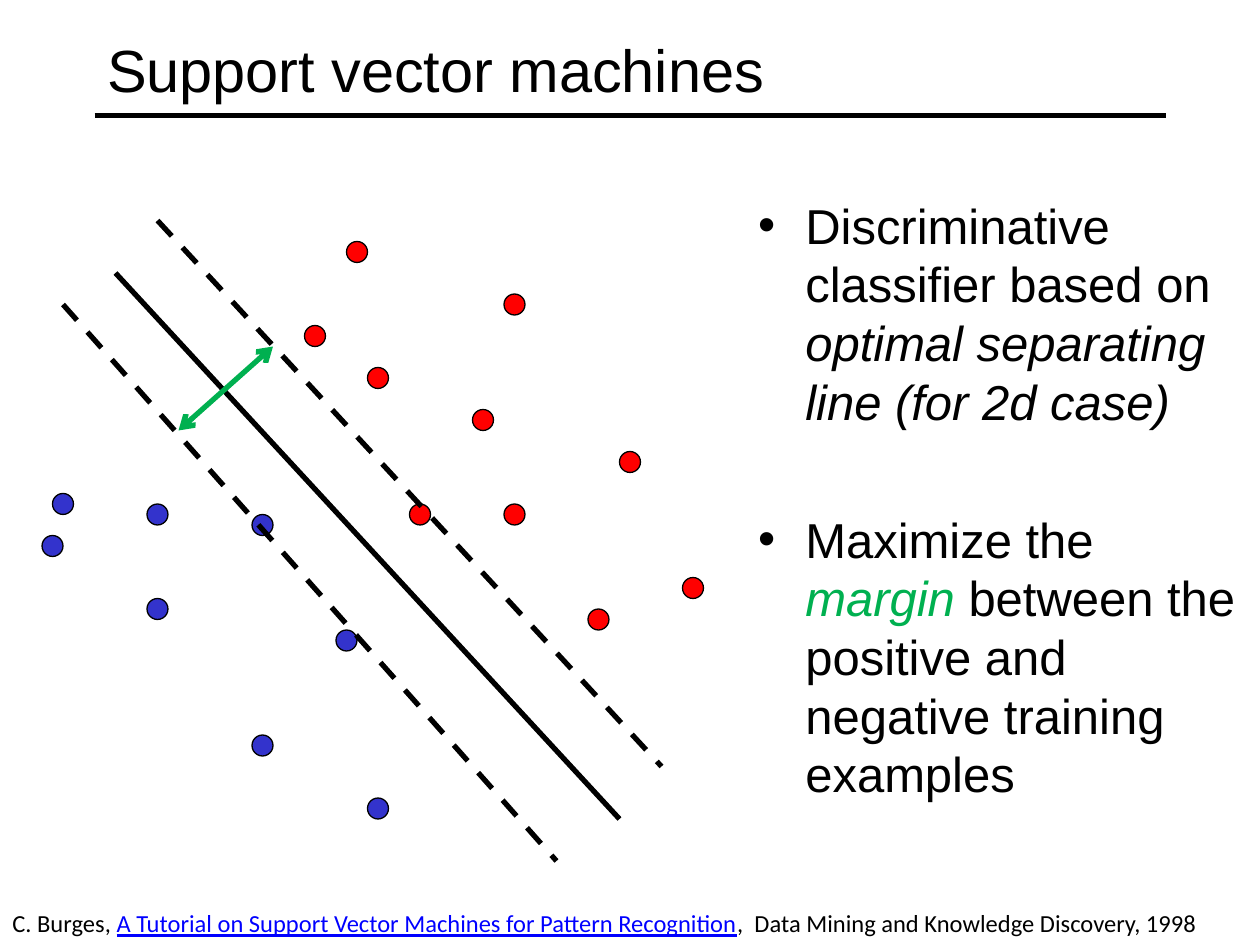
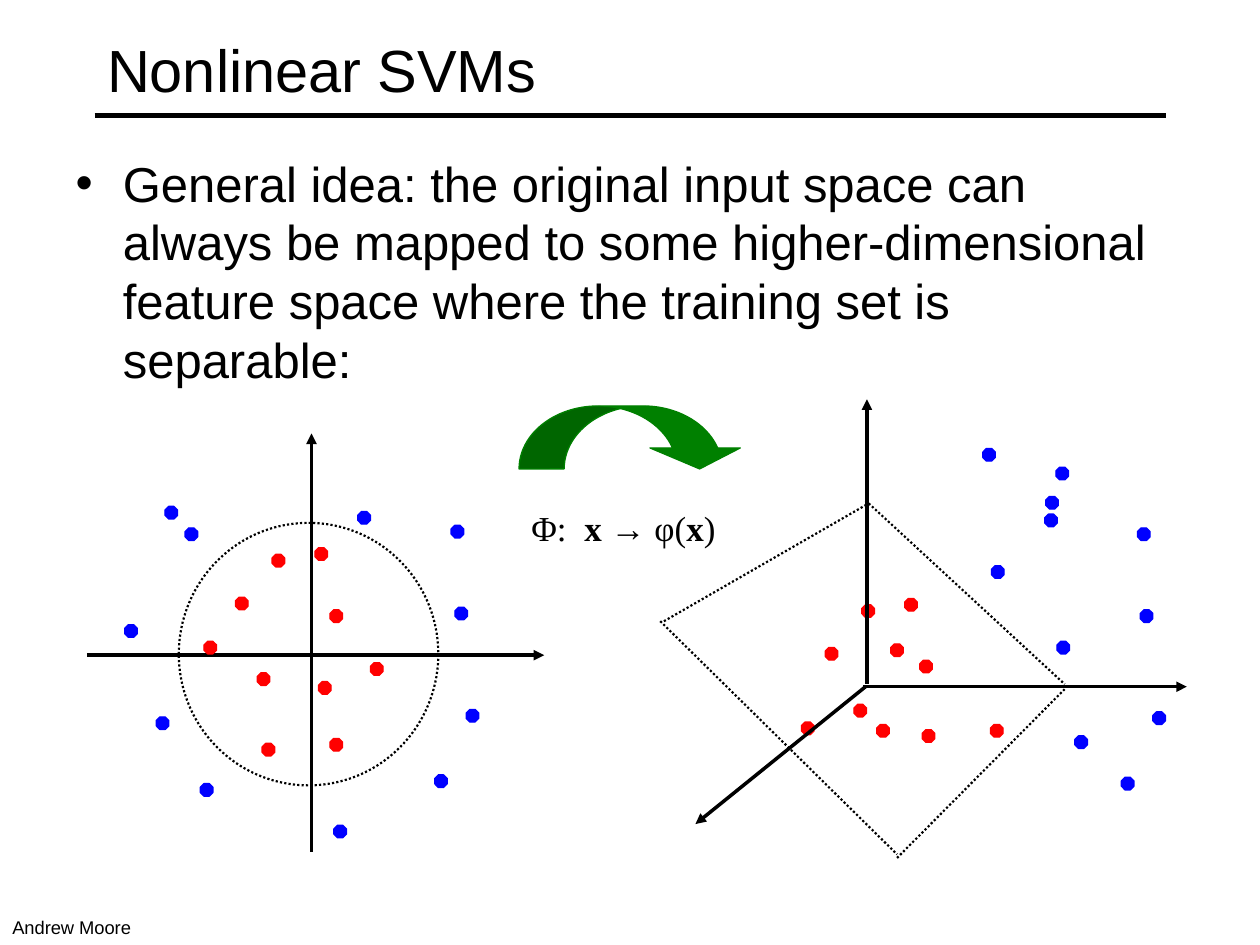
from dataclasses import dataclass
from typing import Optional

from lxml.etree import SubElement
from pptx import Presentation
from pptx.dml.color import RGBColor
from pptx.enum.dml import MSO_LINE_DASH_STYLE as Dash
from pptx.enum.shapes import MSO_CONNECTOR, MSO_SHAPE
from pptx.enum.text import MSO_ANCHOR, MSO_AUTO_SIZE, PP_ALIGN
from pptx.oxml.ns import qn
from pptx.util import Pt

# Shared look
BLACK = RGBColor(0x00, 0x00, 0x00)
RED = RGBColor(0xFF, 0x00, 0x00)
BLUE = RGBColor(0x00, 0x00, 0xFF)
INDIGO = RGBColor(0x33, 0x33, 0xCC)
MARGIN_GREEN = RGBColor(0x00, 0xB0, 0x50)
ARROW_GREEN = RGBColor(0x00, 0x80, 0x00)
SANS, FOOTER_SANS, SERIF = "Arial", "Calibri", "Times New Roman"
TITLE_SIZE, BODY_SIZE = 34, 28
BODY_PITCH = 33.5


@dataclass(frozen=True)
class Span:
    text: str
    color: RGBColor = BLACK
    bold: bool = False
    italic: bool = False
    underline: bool = False


@dataclass(frozen=True)
class Box:
    left: float
    top: float
    width: float
    height: float

    def lengths(self) -> tuple:
        return Pt(self.left), Pt(self.top), Pt(self.width), Pt(self.height)


@dataclass(frozen=True)
class Stroke:
    width: float
    color: RGBColor = BLACK
    dash: Optional[Dash] = None
    head: Optional[str] = None
    tail: Optional[str] = None


@dataclass(frozen=True)
class Segment:
    x1: float
    y1: float
    x2: float
    y2: float
    stroke: Stroke


@dataclass(frozen=True)
class Cluster:
    """Points of one class, given by their top left corners."""
    preset: MSO_SHAPE
    size: float
    fill: RGBColor
    outline: RGBColor
    corners: tuple


RULE = Segment(54, 66, 666, 66, Stroke(3))
AXIS = Stroke(2, tail="triangle")
DOTTED = Stroke(1.25, dash=Dash.ROUND_DOT)
SOLID, DASHED = Stroke(3), Stroke(3, dash=Dash.DASH)

# Slide 1: separable points and their margin
NEGATIVES = Cluster(MSO_SHAPE.OVAL, 12, INDIGO, BLACK, (
    (30, 282), (84, 288), (84, 342), (24, 306),
    (144, 294), (192, 360), (144, 420), (210, 456)))
POSITIVES = Cluster(MSO_SHAPE.OVAL, 12, RED, BLACK, (
    (210, 210), (270, 234), (288, 288), (234, 288), (174, 186),
    (336, 348), (354, 258), (288, 168), (390, 330), (198, 138)))
MARGIN_LINES = (
    Segment(36, 174, 318, 492, DASHED),
    Segment(90, 126, 378, 438, DASHED),
    Segment(66, 156, 354, 468, SOLID),
    Segment(102, 246, 156, 198,
            Stroke(3, MARGIN_GREEN, head="arrow", tail="arrow")),
)


# Slide 2: input space on the left, feature space on the right
def octagons(color: RGBColor, *corners: tuple) -> Cluster:
    return Cluster(MSO_SHAPE.OCTAGON, 7.2, color, color, corners)


INPUT_POINTS = (
    octagons(RED, (180, 313), (134.6, 341.3), (147, 384.5), (188.6, 422),
             (155.5, 316.8), (116.6, 366.5), (149.8, 424.8), (188.6, 348.5),
             (211.7, 378.7), (182, 389.5)),
    octagons(BLUE, (260, 347), (248.4, 442.8), (71.3, 357), (190.8, 471.6),
             (266.4, 405.4), (114.5, 447.8), (89.3, 409.7), (94.3, 289.4),
             (204.5, 292.3), (105.8, 301.7), (257.8, 300.2)),
)
FEATURE_POINTS = (
    octagons(RED, (517, 342), (471.6, 370), (501, 414), (566, 414),
             (492.5, 345.6), (509, 368), (527, 417), (525.6, 377.3),
             (488, 402.5), (458, 412.6)),
    octagons(BLUE, (651.6, 348.5), (640.8, 444.2), (603.4, 267),
             (604, 366.5), (658.8, 406.8), (566.6, 323.3), (614.2, 420.5),
             (597.6, 283.7), (597, 293.8), (561.6, 256.3), (650, 301.7)),
)
INPUT_AXES = (
    Segment(178, 486.7, 178, 247.7, AXIS),
    Segment(49.7, 374.4, 311, 374.4, AXIS),
)
FEATURE_LINES = (
    Segment(495.4, 391, 495.4, 228.2, AXIS),
    Segment(493.2, 392.4, 678.2, 392.4, AXIS),
    Segment(494.6, 392.4, 397.4, 470.9, AXIS),
    # Edges of the separating plane
    Segment(494.6, 286, 608.4, 391, DOTTED),
    Segment(512.6, 490.3, 608.4, 393.8, DOTTED),
    Segment(379.4, 355, 494.6, 288.7, DOTTED),
    Segment(377.3, 355, 512.6, 488.2, DOTTED),
)


def write(paragraph, spans: tuple, font_name: str, size: float) -> None:
    for span in spans:
        run = paragraph.add_run()
        run.text = span.text
        font = run.font
        font.name, font.size = font_name, Pt(size)
        font.bold, font.italic = span.bold, span.italic
        font.underline = span.underline
        font.color.rgb = span.color


def place(placeholder, box: Box) -> None:
    (placeholder.left, placeholder.top,
     placeholder.width, placeholder.height) = box.lengths()
    placeholder.text_frame.auto_size = MSO_AUTO_SIZE.NONE


def draw_segment(slide, segment: Segment) -> None:
    stroke = segment.stroke
    connector = slide.shapes.add_connector(
        MSO_CONNECTOR.STRAIGHT, Pt(segment.x1), Pt(segment.y1),
        Pt(segment.x2), Pt(segment.y2))
    connector.line.color.rgb = stroke.color
    connector.line.width = Pt(stroke.width)
    if stroke.dash:
        connector.line.dash_style = stroke.dash
    properties = connector.element.spPr
    outline = properties.find(qn("a:ln"))
    for tag, kind in (("a:headEnd", stroke.head), ("a:tailEnd", stroke.tail)):
        if kind:
            SubElement(outline, qn(tag), type=kind)
    SubElement(properties, qn("a:effectLst"))


def draw_shape(slide, preset: MSO_SHAPE, box: Box, fill: Optional[RGBColor],
               outline: RGBColor, width: float = 0.75):
    shape = slide.shapes.add_shape(preset, *box.lengths())
    shape.shadow.inherit = False
    if fill is None:
        shape.fill.background()
    else:
        shape.fill.solid()
        shape.fill.fore_color.rgb = fill
    shape.line.color.rgb = outline
    shape.line.width = Pt(width)
    return shape


def draw_cluster(slide, cluster: Cluster) -> None:
    for left, top in cluster.corners:
        draw_shape(slide, cluster.preset,
                   Box(left, top, cluster.size, cluster.size),
                   cluster.fill, cluster.outline)


def add_text(slide, box: Box, spans: tuple, font_name: str, size: float,
             wrap: bool = True, before: float = 0) -> None:
    frame = slide.shapes.add_textbox(*box.lengths()).text_frame
    frame.word_wrap = wrap
    frame.paragraphs[0].space_before = Pt(before)
    write(frame.paragraphs[0], spans, font_name, size)


def start_slide(deck, heading: str, body_box: Box, bullets: tuple):
    """Add a slide with the ruled title and its bulleted list."""
    slide = deck.slides.add_slide(deck.slide_layouts[1])
    draw_segment(slide, RULE)

    title = slide.shapes.title
    place(title, Box(54, 6, 612, 66))
    title.text_frame.vertical_anchor = MSO_ANCHOR.MIDDLE
    title.text_frame.paragraphs[0].alignment = PP_ALIGN.LEFT
    write(title.text_frame.paragraphs[0], (Span(heading),), SANS, TITLE_SIZE)

    body = slide.placeholders[1]
    place(body, body_box)
    for index, spans in enumerate(bullets):
        frame = body.text_frame
        paragraph = frame.add_paragraph() if index else frame.paragraphs[0]
        paragraph.line_spacing = Pt(BODY_PITCH)
        paragraph.space_before = Pt(45.5 if index else 2)
        write(paragraph, spans, SANS, BODY_SIZE)
    return slide


def build_margin_slide(deck) -> None:
    slide = start_slide(
        deck, "Support vector machines", Box(426, 108, 294, 378),
        ((Span("Discriminative classifier based on "),
          Span("optimal separating line (for 2d case)", italic=True)),
         (Span("Maximize the "),
          Span("margin ", MARGIN_GREEN, italic=True),
          Span("between the positive and negative training examples"))))
    for cluster in (NEGATIVES, POSITIVES):
        draw_cluster(slide, cluster)
    for segment in MARGIN_LINES:
        draw_segment(slide, segment)
    add_text(slide, Box(0, 515.5, 720, 24.5), (
        Span("C. Burges, "),
        Span("A Tutorial on Support Vector Machines for Pattern Recognition",
             BLUE, underline=True),
        Span(",  Data Mining and Knowledge Discovery, 1998"),
    ), FOOTER_SANS, 14)


def build_mapping_slide(deck) -> None:
    slide = start_slide(
        deck, "Nonlinear SVMs", Box(36, 84, 648, 392.5),
        ((Span("General idea: the original input space can always be mapped "
               "to some higher-dimensional feature space where the training "
               "set is separable:"),),))
    # Input space with its circular boundary
    for segment in INPUT_AXES:
        draw_segment(slide, segment)
    for cluster in INPUT_POINTS:
        draw_cluster(slide, cluster)
    boundary = draw_shape(slide, MSO_SHAPE.OVAL, Box(102.2, 298.8, 148.3, 150),
                          None, BLACK, DOTTED.width)
    boundary.line.dash_style = DOTTED.dash

    # Feature space with its separating plane
    for cluster in FEATURE_POINTS:
        draw_cluster(slide, cluster)
    for segment in FEATURE_LINES:
        draw_segment(slide, segment)

    # Mapping between the two spaces
    mapping = draw_shape(slide, MSO_SHAPE.CURVED_DOWN_ARROW,
                         Box(296.6, 232, 129, 36), ARROW_GREEN, ARROW_GREEN)
    for index, value in enumerate((0.717, 1.433, 0.333)):
        mapping.adjustments[index] = value
    add_text(slide, Box(296.6, 286, 150, 31), (
        Span("Φ:  "), Span("x → ", bold=True), Span("φ("),
        Span("x", bold=True), Span(")"),
    ), SERIF, 20, before=2)
    add_text(slide, Box(0, 520, 83, 20), (Span("Andrew Moore"),),
             SANS, 10.5, wrap=False)


def main() -> None:
    deck = Presentation()
    deck.slide_width, deck.slide_height = Pt(720), Pt(540)
    build_margin_slide(deck)
    build_mapping_slide(deck)
    deck.save("out.pptx")


if __name__ == "__main__":
    main()
